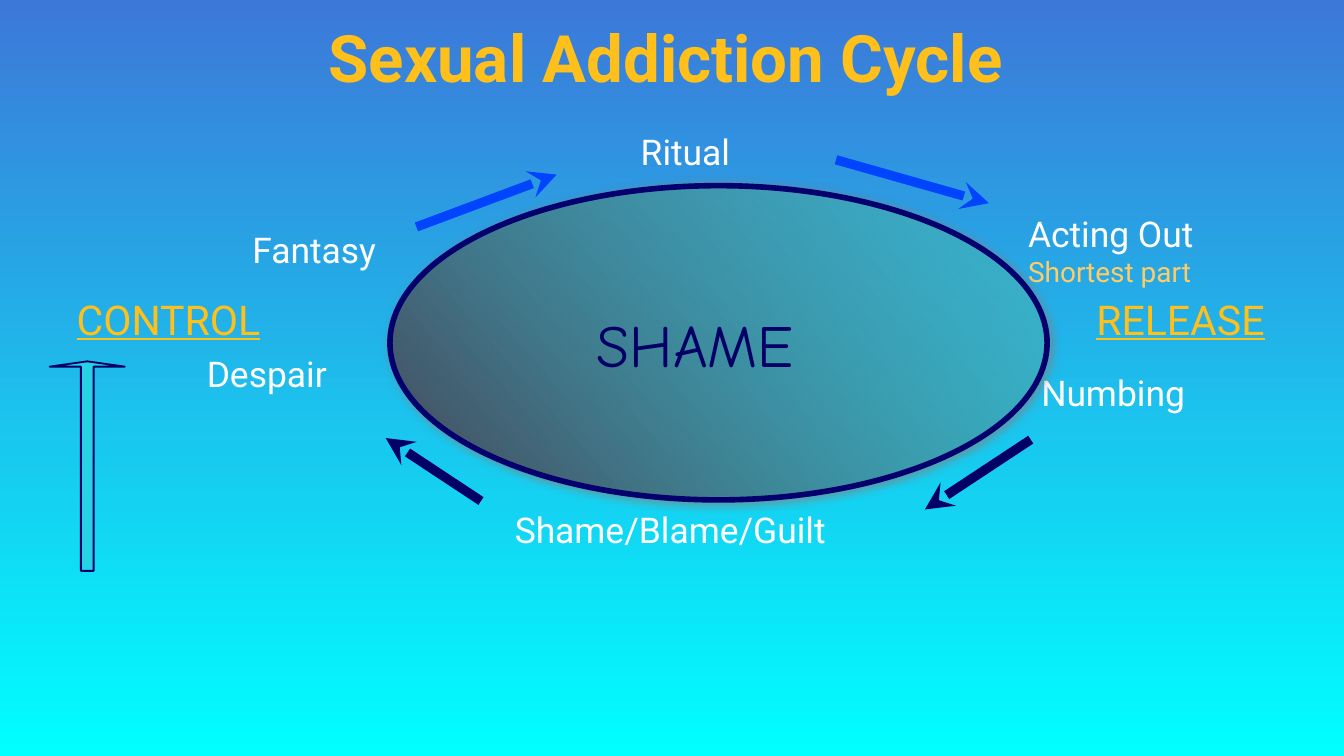
from dataclasses import dataclass

from lxml import etree
from pptx import Presentation
from pptx.dml.color import RGBColor
from pptx.enum.shapes import MSO_CONNECTOR, MSO_SHAPE
from pptx.enum.text import MSO_ANCHOR, PP_ALIGN
from pptx.oxml.ns import qn
from pptx.util import Cm, Pt

ELLIPSE = MSO_SHAPE.OVAL
RIGHT_ARROW = MSO_SHAPE.RIGHT_ARROW
STRAIGHT = MSO_CONNECTOR.STRAIGHT
MIDDLE = MSO_ANCHOR.MIDDLE
LEFT, CENTER = PP_ALIGN.LEFT, PP_ALIGN.CENTER


@dataclass(frozen=True)
class Theme:
    sky: RGBColor = RGBColor.from_string("3C78D8")
    cyan: RGBColor = RGBColor.from_string("00FFFF")
    gold: RGBColor = RGBColor.from_string("FFC01B")
    sand: RGBColor = RGBColor.from_string("FFCC66")
    white: RGBColor = RGBColor.from_string("FFFFFF")
    navy: RGBColor = RGBColor.from_string("000066")
    outline: RGBColor = RGBColor.from_string("04006D")
    blue: RGBColor = RGBColor.from_string("0044FE")
    slate: RGBColor = RGBColor.from_string("464658")
    teal: RGBColor = RGBColor.from_string("26D2E4")
    shadow: str = "808080"
    font: str = "Roboto"
    center_font: str = "Comic Neue"
    title_size: int = 35
    center_size: int = 32
    side_size: int = 22
    stage_size: int = 19
    note_size: int = 15


theme = Theme()


def add_text(slide, box, lines, font=theme.font, align=LEFT):
    """Add a text box; each line is (text, size, colour)."""
    shape = slide.shapes.add_textbox(*(Cm(length) for length in box))
    frame = shape.text_frame
    frame.word_wrap = True
    frame.margin_left = frame.margin_right = Cm(0.1)
    frame.margin_top = frame.margin_bottom = 0
    frame.text = "\n".join(text for text, _, _ in lines)
    for paragraph, (_, size, color) in zip(frame.paragraphs, lines):
        paragraph.alignment = align
        run_font = paragraph.runs[0].font
        run_font.name = font
        run_font.size = Pt(size)
        run_font.color.rgb = color
    return shape


def set_gradient(fill, start, end, angle):
    fill.gradient()
    fill.gradient_angle = angle
    for stop, color, position in zip(fill.gradient_stops, (start, end), (0, 1)):
        stop.color.rgb = color
        stop.position = position


presentation = Presentation()
presentation.slide_width, presentation.slide_height = Cm(25.4), Cm(14.29)
slide = presentation.slides.add_slide(presentation.slide_layouts[6])
set_gradient(slide.background.fill, theme.sky, theme.cyan, 270)

# Title
title = add_text(slide, (0.74, 0.03, 23.9, 2.06),
                 [("Sexual Addiction Cycle", theme.title_size, theme.gold)],
                 align=CENTER)
title.text_frame.vertical_anchor = MIDDLE
title.text_frame.margin_right = Cm(0.3)
title.text_frame.paragraphs[0].runs[0].font.bold = True

# Stages around the cycle
stages = [
    ("Ritual", (12.01, 2.46, 2.13, 0.66)),
    ("Fantasy", (4.67, 4.32, 3.58, 0.81)),
    ("Numbing", (19.58, 7.01, 4.45, 0.81)),
    ("Shame/Blame/Guilt", (9.63, 9.6, 6.63, 0.66)),
    ("Despair", (3.81, 6.65, 3.25, 0.81)),
]
for text, box in stages:
    add_text(slide, box, [(text, theme.stage_size, theme.white)])
add_text(slide, (19.33, 4.01, 3.71, 1.19),
         [("Acting Out", theme.stage_size, theme.white),
          ("Shortest part", theme.note_size, theme.sand)])

# Underlined side headings
for text, box in [("CONTROL", (1.35, 5.56, 4.34, 0.76)),
                  ("RELEASE", (20.62, 5.56, 5.28, 0.91))]:
    heading = add_text(slide, box, [(text, theme.side_size, theme.gold)])
    heading.text_frame.paragraphs[0].runs[0].font.underline = True

# Central ellipse, half transparent at one end, with a soft shadow
ellipse = slide.shapes.add_shape(ELLIPSE, Cm(7.37), Cm(3.51), Cm(12.42), Cm(5.94))
set_gradient(ellipse.fill, theme.slate, theme.teal, 41)
end_color = ellipse._element.spPr.findall(".//" + qn("a:srgbClr"))[1]
etree.SubElement(end_color, qn("a:alpha"), val="49000")
ellipse.line.color.rgb = theme.outline
ellipse.line.width = Pt(3)
ellipse.shadow.inherit = False
effects = ellipse._element.spPr.find(qn("a:effectLst"))
outer_shadow = etree.SubElement(effects, qn("a:outerShdw"), blurRad=str(Pt(5)),
                                dist=str(Pt(1)), dir="2700000")
shadow_color = etree.SubElement(outer_shadow, qn("a:srgbClr"), val=theme.shadow)
etree.SubElement(shadow_color, qn("a:alpha"), val="75000")

# Cycle arrows, each given from its head to its tail
cycle_arrows = [
    ((10.52, 3.3, 7.87, 4.29), theme.blue),
    ((18.69, 3.84, 15.8, 3.02), theme.blue),
    ((17.48, 9.63, 19.48, 8.31), theme.navy),
    ((7.29, 8.28, 9.09, 9.47), theme.navy),
]
for ends, color in cycle_arrows:
    arrow = slide.shapes.add_connector(STRAIGHT, *(Cm(length) for length in ends))
    arrow.line.color.rgb = color
    arrow.line.width = Pt(5)
    properties = arrow._element.spPr
    etree.SubElement(properties.find(qn("a:ln")), qn("a:headEnd"), type="stealth")
    etree.SubElement(properties, qn("a:effectLst"))

# Upward arrow under CONTROL
up_arrow = slide.shapes.add_shape(RIGHT_ARROW, Cm(-0.33), Cm(8.1), Cm(3.96), Cm(1.42))
up_arrow.rotation = 270
up_arrow.adjustments[0] = 0.17
up_arrow.adjustments[1] = 0.07
up_arrow.fill.solid()
up_arrow.fill.fore_color.rgb = theme.teal
up_arrow.line.color.rgb = theme.navy
up_arrow.line.width = Pt(1)
up_arrow.shadow.inherit = False

# Word at the centre
add_text(slide, (11.18, 5.82, 4.88, 1.12),
         [("SHAME", theme.center_size, theme.navy)], font=theme.center_font)

presentation.save("out.pptx")
